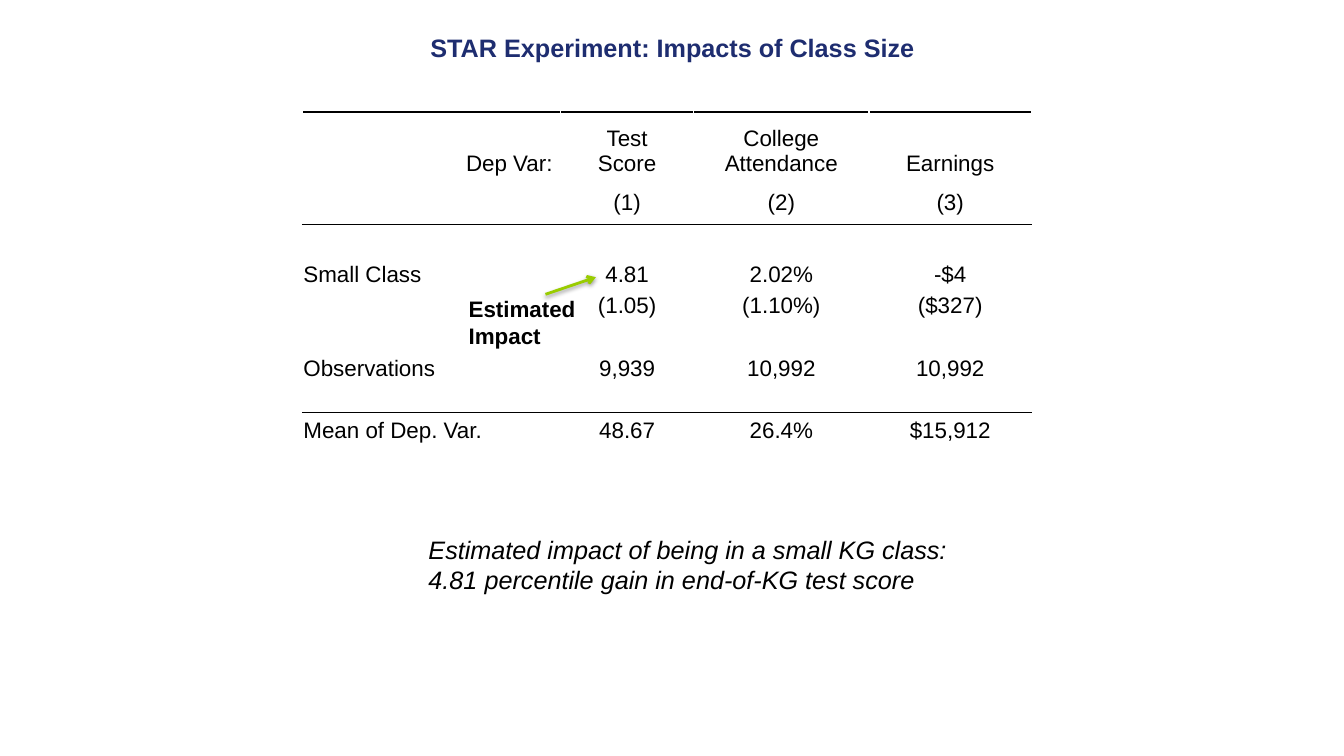
from dataclasses import dataclass

from lxml import etree
from pptx import Presentation
from pptx.dml.color import RGBColor
from pptx.enum.shapes import MSO_CONNECTOR
from pptx.enum.text import MSO_ANCHOR as Anchor, PP_ALIGN as Align
from pptx.oxml import parse_xml
from pptx.oxml.ns import nsdecls, qn
from pptx.util import Inches, Pt


@dataclass(frozen=True)
class Theme:
    font: str = "Arial"
    title_color: str = "1E2D70"
    ink: str = "000000"
    arrow: str = "99CC00"
    title_size: int = 18
    table_size: int = 16
    note_size: int = 18
    gap_size: int = 4
    thick_rule: float = 1.5
    thin_rule: float = 1


THEME = Theme()
COLUMNS = [2.56, 1.32, 1.74, 1.61]
ROW_HEIGHTS = [0.64, 0.13, 0.35] + [0.31] * 7
NUMBER_ROW = 2
BLANK = [""] * 4
ROWS = [
    ["Dep Var:", "Test\nScore", "College\nAttendance", "Earnings"],
    BLANK,
    ["", "(1)", "(2)", "(3)"],
    BLANK,
    ["Small Class", "4.81", "2.02%", "-$4"],
    ["", "(1.05)", "(1.10%)", "($327)"],
    BLANK,
    ["Observations", "9,939", "10,992", "10,992"],
    BLANK,
    ["Mean of Dep. Var.", "48.67", "26.4%", "$15,912"],
]
# Each rule is (row, edge, width); a rule between rows belongs to both of them.
RULES = [(0, "T", THEME.thick_rule)] + [
    (row + step, edge, THEME.thin_rule)
    for row in (2, 8) for step, edge in ((0, "B"), (1, "T"))
]


def set_margins(holder, left, top, right, bottom):
    holder.margin_left, holder.margin_top = Inches(left), Inches(top)
    holder.margin_right, holder.margin_bottom = Inches(right), Inches(bottom)


def write_lines(frame, text, size, align=Align.LEFT, color=THEME.ink,
                bold=False, italic=False):
    """Write one paragraph for each line of text."""
    for index, line in enumerate(text.split("\n")):
        para = frame.add_paragraph() if index else frame.paragraphs[0]
        para.alignment = align
        if line:
            para.add_run().text = line
        font = para.font
        font.name, font.size = THEME.font, Pt(size)
        font.bold, font.italic = bold, italic
        font.color.rgb = RGBColor.from_string(color)


def add_text(page, box, text, size, margins=(0.1, 0.05, 0.1, 0.05),
             anchor=Anchor.TOP, **style):
    frame = page.shapes.add_textbox(*map(Inches, box)).text_frame
    frame.word_wrap = True
    frame.vertical_anchor = anchor
    set_margins(frame, *margins)
    write_lines(frame, text, size, **style)


def add_rule(cell, edge, width):
    """Draw one horizontal border, ahead of the cell's fill."""
    cell._tc.get_or_add_tcPr().insert(0, parse_xml(
        f'<a:ln{edge} {nsdecls("a")} w="{Pt(width)}"><a:solidFill>'
        f'<a:srgbClr val="{THEME.ink}"/></a:solidFill></a:ln{edge}>'))


def fill_cell(cell, row, column, text):
    cell.fill.background()
    cell.vertical_anchor = Anchor.TOP if row == NUMBER_ROW else Anchor.BOTTOM
    heading = (row, column) == (0, 0)
    set_margins(cell, 0.01, 0.01, 0.08 if heading else 0.01, 0)
    align = Align.RIGHT if heading else Align.CENTER if column else Align.LEFT
    size = THEME.table_size if text else THEME.gap_size
    write_lines(cell.text_frame, text, size, align)
    if not text:
        para = cell.text_frame.paragraphs[0]._p
        etree.SubElement(para, qn("a:endParaRPr"), sz=str(size * 100))


def add_results_table(page, left, top):
    table = page.shapes.add_table(
        len(ROWS), len(COLUMNS), Inches(left), Inches(top),
        Inches(sum(COLUMNS)), Inches(sum(ROW_HEIGHTS))).table
    table.first_row = table.horz_banding = False
    for column, width in zip(table.columns, COLUMNS):
        column.width = Inches(width)
    for row, height in zip(table.rows, ROW_HEIGHTS):
        row.height = Inches(height)
    for row, texts in enumerate(ROWS):
        for column, text in enumerate(texts):
            fill_cell(table.cell(row, column), row, column, text)
    for row, edge, width in RULES:
        for column in range(len(COLUMNS)):
            add_rule(table.cell(row, column), edge, width)


def add_impact_callout(page, left, top):
    """Place the label and the arrow from it to the estimate."""
    arrow = page.shapes.add_connector(
        MSO_CONNECTOR.STRAIGHT, Inches(left + 0.86), Inches(top + 0.04),
        Inches(left + 1.36), Inches(top - 0.13))
    arrow.line.color.rgb = RGBColor.from_string(THEME.arrow)
    arrow.line.width = Pt(2)
    etree.SubElement(arrow.line._get_or_add_ln(), qn("a:tailEnd"), type="arrow")
    arrow._element.spPr.append(parse_xml(
        f'<a:effectLst {nsdecls("a")}><a:outerShdw blurRad="{Pt(3.1)}" '
        f'dist="{Pt(1.6)}" dir="5400000" rotWithShape="0">'
        f'<a:srgbClr val="{THEME.ink}"><a:alpha val="38000"/></a:srgbClr>'
        '</a:outerShdw></a:effectLst>'))
    add_text(page, (left, top, 1.4, 0.64), "Estimated\nImpact",
             THEME.table_size, bold=True)


def build_results_slide(deck):
    page = deck.slides.add_slide(deck.slide_layouts[6])
    add_text(page, (0.67, 0.33, 12, 0.28),
             "STAR Experiment: Impacts of Class Size", THEME.title_size,
             margins=(0, 0, 0, 0), anchor=Anchor.MIDDLE, align=Align.CENTER,
             color=THEME.title_color, bold=True)
    add_results_table(page, 3, 1.11)
    add_impact_callout(page, 4.55, 2.88)
    add_text(page, (4.08, 5.25, 5.53, 0.71),
             "Estimated impact of being in a small KG class:\n"
             "4.81 percentile gain in end-of-KG test score",
             THEME.note_size, margins=(0.17, 0.05, 0.1, 0.05), italic=True)


def main():
    deck = Presentation()
    deck.slide_width, deck.slide_height = Inches(13.33), Inches(7.5)
    build_results_slide(deck)
    deck.save("out.pptx")


if __name__ == "__main__":
    main()
